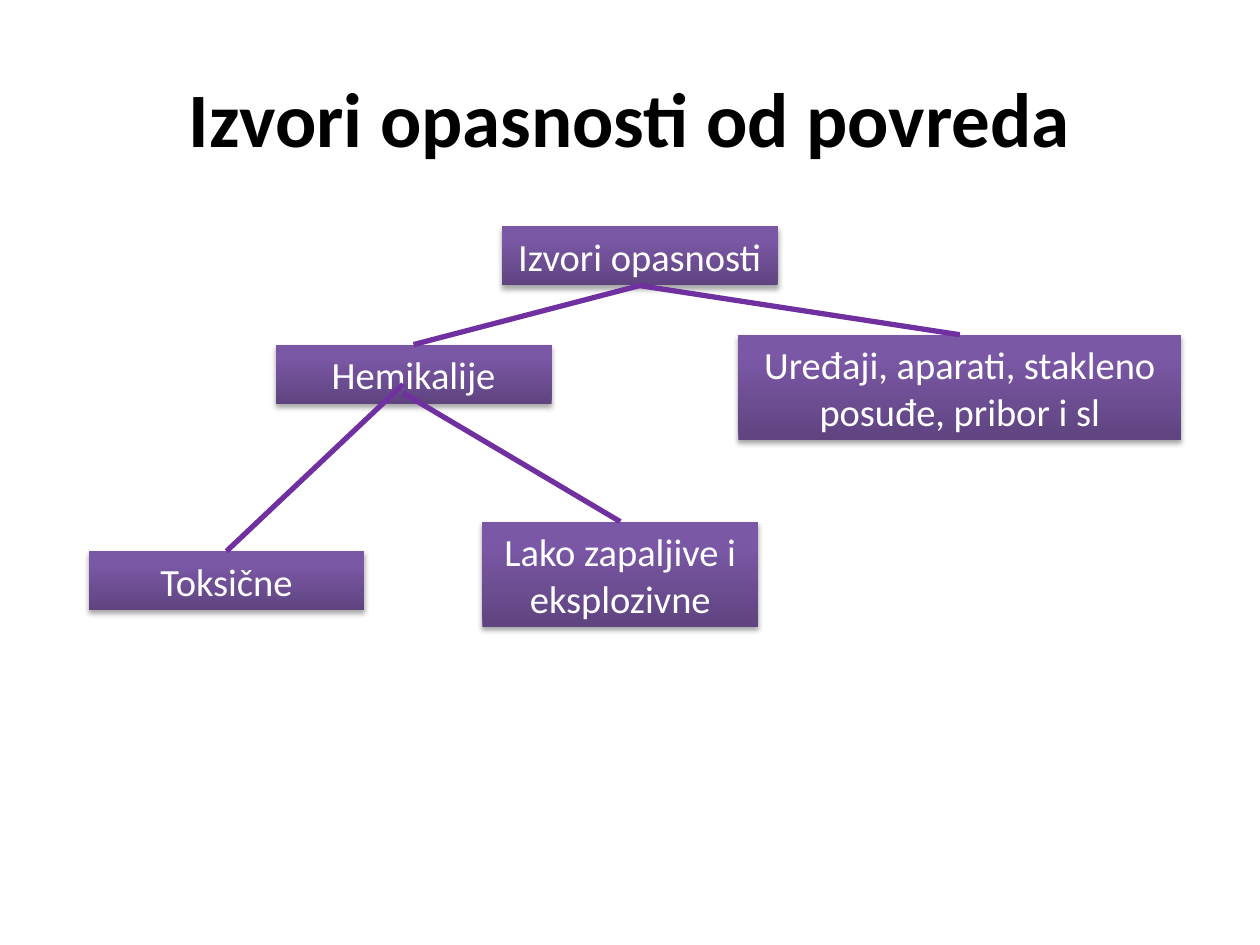
import copy

import pptx
import pptx.dml.color
import pptx.enum.dml
import pptx.enum.shapes
import pptx.enum.text
import pptx.oxml
import pptx.oxml.ns
import pptx.util

Pt = pptx.util.Pt
BOTTOM, TOP = 2, 0  # connection sites of a rectangle


def color(hex_string):
    return pptx.dml.color.RGBColor.from_string(hex_string)


def write_text(shape, text, size=22, fill="FFFFFF", bold=False, font="Calibri"):
    frame = shape.text_frame
    frame.word_wrap = True
    frame.vertical_anchor = pptx.enum.text.MSO_ANCHOR.MIDDLE
    paragraph = frame.paragraphs[0]
    paragraph.alignment = pptx.enum.text.PP_ALIGN.CENTER
    run = paragraph.add_run()
    run.text = text
    run.font.name = font
    run.font.size = Pt(size)
    run.font.bold = bold
    run.font.color.rgb = color(fill)


class TreeSlide:
    gradient = [(0, "5F4480"), (0.8, "7B58A6"), (1, "7C57A8")]
    line_color = "7030A0"
    line_width = 3
    box_width = 157.7
    line_height = 26.6
    box_padding = 7.2

    def __init__(self, presentation):
        self.slide = presentation.slides.add_slide(presentation.slide_layouts[5])

    def title(self, text, left, top, width, height):
        title = self.slide.shapes.title
        title.left, title.top = Pt(left), Pt(top)
        title.width, title.height = Pt(width), Pt(height)
        write_text(title, text, size=44, fill="000000", bold=True)

    def box(self, text, left, top, width=box_width, lines=1):
        height = self.box_padding + lines * self.line_height
        shape = self.slide.shapes.add_shape(
            pptx.enum.shapes.MSO_SHAPE.RECTANGLE,
            Pt(left), Pt(top), Pt(width), Pt(height))
        self.fill_gradient(shape)
        shape.line.fill.background()
        self.add_shadow(shape)
        write_text(shape, text)
        shape.text_frame.auto_size = pptx.enum.text.MSO_AUTO_SIZE.SHAPE_TO_FIT_TEXT
        return shape

    def fill_gradient(self, shape):
        """Fill from the bottom edge to the top with the style's stops."""
        shape.fill.gradient()
        shape.fill.gradient_angle = 90
        stop_list = shape.fill._fill._gradFill.gsLst
        stop_list.append(copy.deepcopy(stop_list[-1]))
        for stop, (position, hex_string) in zip(shape.fill.gradient_stops, self.gradient):
            stop.position = position
            stop.color.rgb = color(hex_string)

    def add_shadow(self, shape):
        shape.shadow.inherit = False
        effects = shape._element.spPr.find(pptx.oxml.ns.qn("a:effectLst"))
        effects.append(pptx.oxml.parse_xml(
            f'<a:outerShdw {pptx.oxml.ns.nsdecls("a")} blurRad="{Pt(3.1)}" '
            f'dist="{Pt(1.8)}" dir="5400000" rotWithShape="0">'
            '<a:srgbClr val="000000"><a:alpha val="35000"/></a:srgbClr></a:outerShdw>'))

    def branch(self, child, parent=None, start=(0, 0)):
        """Draw a line to the child's top from the parent's bottom or a free point."""
        line = self.slide.shapes.add_connector(
            pptx.enum.shapes.MSO_CONNECTOR.STRAIGHT,
            Pt(start[0]), Pt(start[1]), child.left, child.top)
        if parent is not None:
            line.begin_connect(parent, BOTTOM)
        line.end_connect(child, TOP)
        line.line.color.rgb = color(self.line_color)
        line.line.width = Pt(self.line_width)
        line._element.spPr.append(pptx.oxml.parse_xml(
            f'<a:effectLst {pptx.oxml.ns.nsdecls("a")}/>'))


def main():
    presentation = pptx.Presentation()
    presentation.slide_width, presentation.slide_height = Pt(720), Pt(540)
    tree = TreeSlide(presentation)
    tree.title("Izvori opasnosti od povreda", 36, 21.6, 648, 90)

    sources = tree.box("Izvori opasnosti", 286.7, 129.4)
    chemicals = tree.box("Hemikalije", 157.5, 196.9)
    equipment = tree.box("Uređaji, aparati, stakleno posuđe, pribor i sl",
                         421.9, 191.3, width=253.2, lines=2)
    toxic = tree.box("Toksične", 50.6, 315)
    flammable = tree.box("Lako zapaljive i eksplozivne", 275.6, 298.1, lines=2)

    for child in (chemicals, equipment):
        tree.branch(child, parent=sources)
    tree.branch(toxic, start=(230.4, 219.6))
    tree.branch(flammable, start=(230.4, 224.6))

    presentation.save("out.pptx")


if __name__ == "__main__":
    main()
